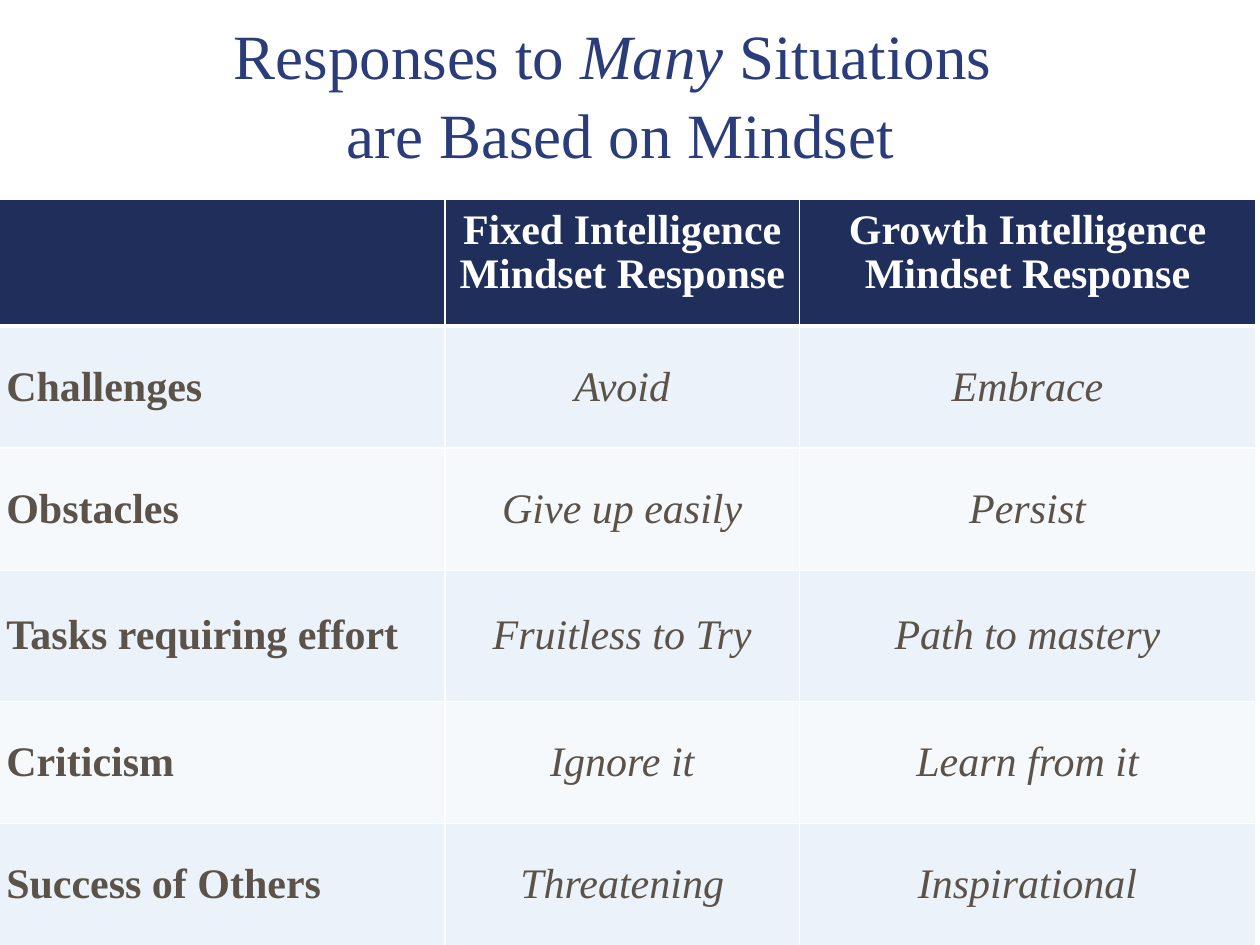
from lxml.etree import SubElement
from pptx import Presentation
from pptx.dml.color import RGBColor
from pptx.enum.text import MSO_ANCHOR, MSO_AUTO_SIZE, PP_ALIGN
from pptx.oxml.ns import qn
from pptx.util import Pt

FONT = "Times New Roman"
NAVY, INDIGO, BROWN, WHITE = "202E5C", "2A3D7A", "5B5249", "FFFFFF"
BANDS = ("EBF2FA", "F5F9FC")

TITLE_LINES = [
    [("Responses to ", False), ("Many", True), (" Situations ", False)],
    [("are Based on Mindset", False)],
]
ROWS = [
    ("", "Fixed Intelligence Mindset Response", "Growth Intelligence Mindset Response"),
    ("Challenges", "Avoid", "Embrace"),
    ("Obstacles", "Give up easily", "Persist"),
    ("Tasks requiring effort", "Fruitless to Try", "Path to mastery"),
    ("Criticism", "Ignore it", "Learn from it"),
    ("Success of Others", "Threatening", "Inspirational"),
]
COL_WIDTHS = (257.8, 202.8, 260.4)
ROW_HEIGHTS = (72.5, 69.8, 69.8, 74.9, 69.8, 69.8)


def rgb(value):
    return RGBColor.from_string(value)


class SlideBuilder:
    def __init__(self, slide):
        self.s = slide

    def style(self, r, size, color, bold=False, italic=False):
        r.font.name, r.font.size = FONT, Pt(size)
        r.font.bold, r.font.italic = bold, italic
        r.font.color.rgb = rgb(color)

    def title(self, lines, left, top, width, height, size=36):
        sp = self.s.shapes.title
        sp.left, sp.top, sp.width, sp.height = map(Pt, (left, top, width, height))
        tf = sp.text_frame
        tf.auto_size = MSO_AUTO_SIZE.NONE
        tf.vertical_anchor = MSO_ANCHOR.BOTTOM
        tf.margin_bottom = Pt(46)
        p = tf.paragraphs[0]
        p.alignment, p.line_spacing = PP_ALIGN.CENTER, 1.05
        for i, line in enumerate(lines):
            if i:
                p.add_line_break()
            for text, italic in line:
                r = p.add_run()
                r.text = text
                self.style(r, size, INDIGO, italic=italic)
        for br in p._p.findall(qn("a:br")):
            SubElement(br, qn("a:rPr"), sz=str(size * 100))

    def borders(self, cell, top=1, bottom=1):
        """Draw white cell edges; they must precede the fill in the cell's XML."""
        tc_pr = cell._tc.get_or_add_tcPr()
        for tag, width in (("lnL", 1), ("lnR", 1), ("lnT", top), ("lnB", bottom)):
            ln = SubElement(tc_pr, qn(f"a:{tag}"), w=str(Pt(width)))
            fill = SubElement(ln, qn("a:solidFill"))
            SubElement(fill, qn("a:srgbClr"), val=WHITE)

    def cell(self, cell, text, row, col):
        header = row == 0
        self.borders(cell, top=3 if row == 1 else 1, bottom=3 if header else 1)
        cell.fill.solid()
        cell.fill.fore_color.rgb = rgb(NAVY if header else BANDS[(row - 1) % 2])
        cell.vertical_anchor = MSO_ANCHOR.TOP if header else MSO_ANCHOR.MIDDLE
        cell.text_frame.text = text
        p = cell.text_frame.paragraphs[0]
        p.alignment = PP_ALIGN.CENTER if col else PP_ALIGN.LEFT
        if header:
            cell.margin_top = Pt(5.5)
            p.line_spacing = 0.95
        for r in p.runs:
            self.style(r, 24, WHITE if header else BROWN,
                       bold=header or col == 0, italic=not header and col > 0)

    def table(self, rows, widths, heights, left, top):
        frame = self.s.shapes.add_table(len(rows), len(widths), Pt(left), Pt(top),
                                        Pt(sum(widths)), Pt(sum(heights)))
        table = frame.table
        for column, width in zip(table.columns, widths):
            column.width = Pt(width)
        for row, height in zip(table.rows, heights):
            row.height = Pt(height)
        for i, texts in enumerate(rows):
            for j, text in enumerate(texts):
                self.cell(table.cell(i, j), text, i, j)


def main():
    prs = Presentation()
    prs.slide_width, prs.slide_height = Pt(720), Pt(540)
    builder = SlideBuilder(prs.slides.add_slide(prs.slide_layouts[5]))
    builder.title(TITLE_LINES, -5.8, 41.8, 720.7, 102.2)
    builder.table(ROWS, COL_WIDTHS, ROW_HEIGHTS, -3.6, 113.8)
    prs.save("out.pptx")


if __name__ == "__main__":
    main()
